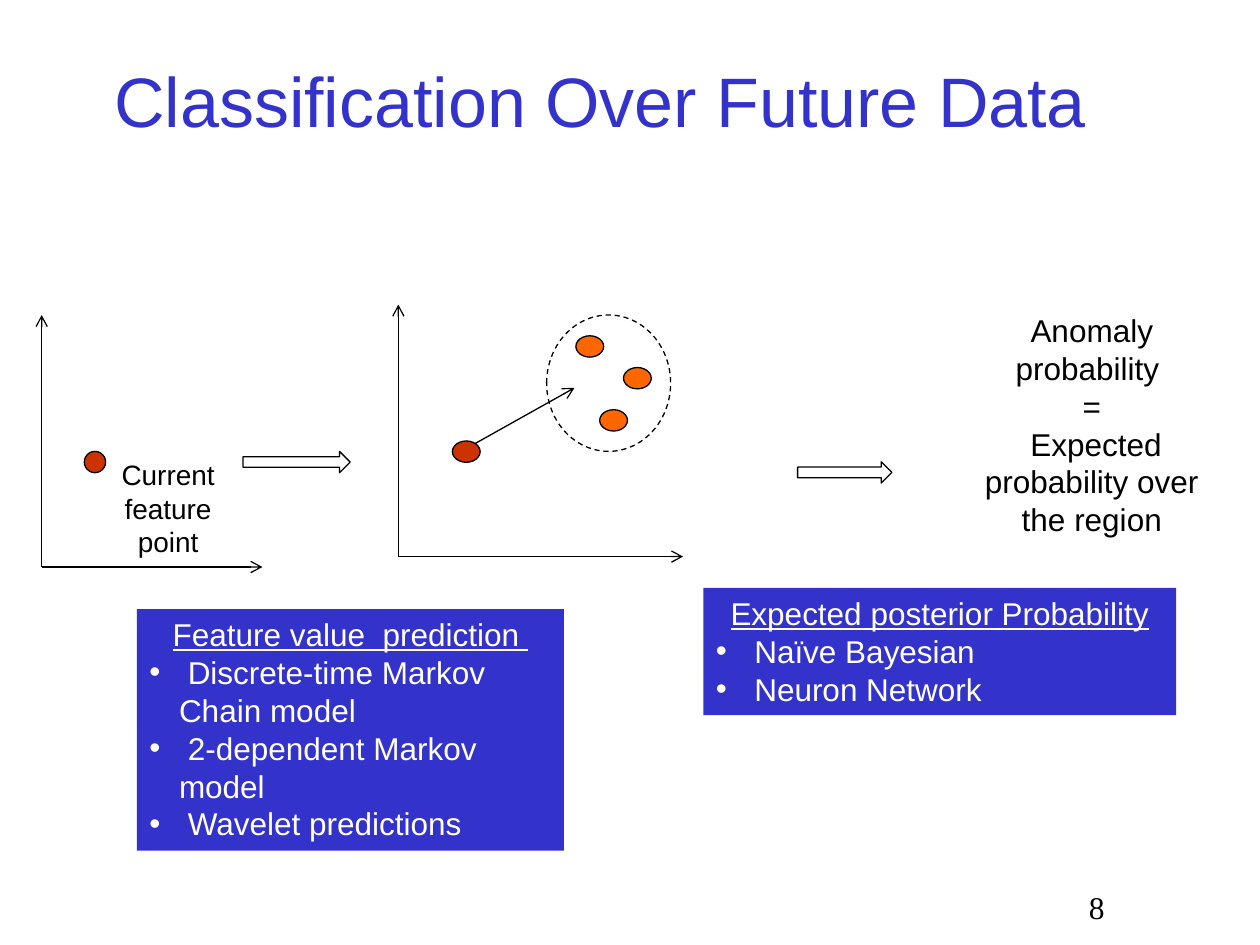
import pptx
import pptx.dml.color
import pptx.enum.dml
import pptx.enum.shapes
import pptx.enum.text
import pptx.oxml
import pptx.oxml.ns
import pptx.util
from lxml import etree

Cm, Pt = pptx.util.Cm, pptx.util.Pt
RGBColor = pptx.dml.color.RGBColor
SHAPE = pptx.enum.shapes.MSO_SHAPE
ALIGN = pptx.enum.text.PP_ALIGN
qn = pptx.oxml.ns.qn

BLUE = RGBColor(0x33, 0x33, 0xCC)
RED = RGBColor(0xCC, 0x33, 0x00)
ORANGE = RGBColor(0xFF, 0x66, 0x00)
BLACK = RGBColor(0, 0, 0)
WHITE = RGBColor(0xFF, 0xFF, 0xFF)

# All positions and sizes are in centimetres: left, top, width, height.
TITLE = ("Classification Over Future Data", (0.64, 0.64, 22.91, 2.74))
AXIS_HEIGHT = 5.08
AXES = [(0.84, 11.43, 4.45), (8.03, 11.22, 5.74)]  # origin x, origin y, width
PREDICTION_ARROW = (9.58, 8.94, 11.58, 7.82)  # from x, y to x, y
BLOCK_ARROWS = [(4.9, 9.1, 2.16, 0.43), (16.08, 9.31, 1.9, 0.43)]
POINT_HEIGHT = 0.43
POINTS = [  # left, top, width, colour
    (1.7, 9.1, 0.43, RED),
    (9.12, 8.89, 0.56, RED),
    (11.61, 6.77, 0.56, ORANGE),
    (12.57, 7.41, 0.56, ORANGE),
    (12.09, 8.26, 0.56, ORANGE),
]
REGION = (11.02, 6.35, 2.5, 2.75)
LABELS = [  # lines, box, size, font
    (["Current feature point"], (1.7, 9.1, 3.38, 2.31), 16, "Arial"),
    (["Anomaly probability ", "=", " Expected probability over the region"],
     (19.47, 6.15, 5.08, 4.88), 18, "Arial"),
    (["8"], (19.47, 17.78, 5.28, 1.27), 18, "Times New Roman"),
]
METHODS = [  # heading, bullets, box
    ("Feature value  prediction ",
     [" Discrete-time Markov Chain model", " 2-dependent Markov model", " Wavelet predictions"],
     (2.76, 12.28, 8.61, 4.87)),
    ("Expected posterior Probability",
     [" Naïve Bayesian", " Neuron Network"],
     (14.18, 11.85, 9.53, 2.57)),
]


def write(tf, lines, size, color, font="Arial"):
    tf.word_wrap = True
    tf.text = "\n".join(lines)
    for p in tf.paragraphs:
        p.alignment = ALIGN.CENTER
        for r in p.runs:
            r.font.size = Pt(size)
            r.font.name = font
            r.font.color.rgb = color


def add_shape(s, kind, box, fill=None, outlined=True):
    sp = s.shapes.add_shape(kind, *map(Cm, box))
    sp.shadow.inherit = False
    if fill is None:
        sp.fill.background()
    else:
        sp.fill.solid()
        sp.fill.fore_color.rgb = fill
    if outlined:
        sp.line.color.rgb = BLACK
        sp.line.width = Pt(0.75)
    else:
        sp.line.fill.background()
    return sp


def add_arrow(s, x1, y1, x2, y2):
    line = s.shapes.add_connector(
        pptx.enum.shapes.MSO_CONNECTOR.STRAIGHT, Cm(x1), Cm(y1), Cm(x2), Cm(y2))
    line.line.color.rgb = BLACK
    line.line.width = Pt(0.75)
    etree.SubElement(line.line._get_or_add_ln(), qn("a:tailEnd"), type="arrow")
    etree.SubElement(line._element.spPr, qn("a:effectLst"))


def make_bullet(p):
    p.alignment = ALIGN.LEFT
    pPr = p._p.get_or_add_pPr()
    pPr.set("marL", str(Cm(0.6)))
    pPr.set("indent", str(-Cm(0.6)))
    etree.SubElement(pPr, qn("a:buFont"), typeface="Arial")
    etree.SubElement(pPr, qn("a:buChar"), char="•")


def add_method(s, heading, bullets, box):
    sp = add_shape(s, SHAPE.RECTANGLE, box, BLUE, outlined=False)
    tf = sp.text_frame
    tf.vertical_anchor = pptx.enum.text.MSO_ANCHOR.TOP
    write(tf, [heading, *bullets], 18, WHITE)
    tf.paragraphs[0].runs[0].font.underline = True
    for p in tf.paragraphs[1:]:
        make_bullet(p)


def main():
    prs = pptx.Presentation()
    prs.slide_width, prs.slide_height = Cm(25.4), Cm(19.05)
    s = prs.slides.add_slide(prs.slide_layouts[5])

    text, box = TITLE
    title = s.shapes.title
    title.left, title.top, title.width, title.height = map(Cm, box)
    write(title.text_frame, [text], 40, BLUE)
    title.text_frame.vertical_anchor = pptx.enum.text.MSO_ANCHOR.MIDDLE

    for x, y, width in AXES:
        add_arrow(s, x, y, x, y - AXIS_HEIGHT)
        add_arrow(s, x, y, x + width, y)
    for box in BLOCK_ARROWS:
        add_shape(s, SHAPE.RIGHT_ARROW, box)

    region = add_shape(s, SHAPE.OVAL, REGION)
    region.line.dash_style = pptx.enum.dml.MSO_LINE.DASH
    add_arrow(s, *PREDICTION_ARROW)
    for x, y, width, color in POINTS:
        add_shape(s, SHAPE.OVAL, (x, y, width, POINT_HEIGHT), color)

    for method in METHODS:
        add_method(s, *method)
    for lines, box, size, font in LABELS:
        label = s.shapes.add_textbox(*map(Cm, box))
        write(label.text_frame, lines, size, BLACK, font)

    prs.save("out.pptx")


if __name__ == "__main__":
    main()
